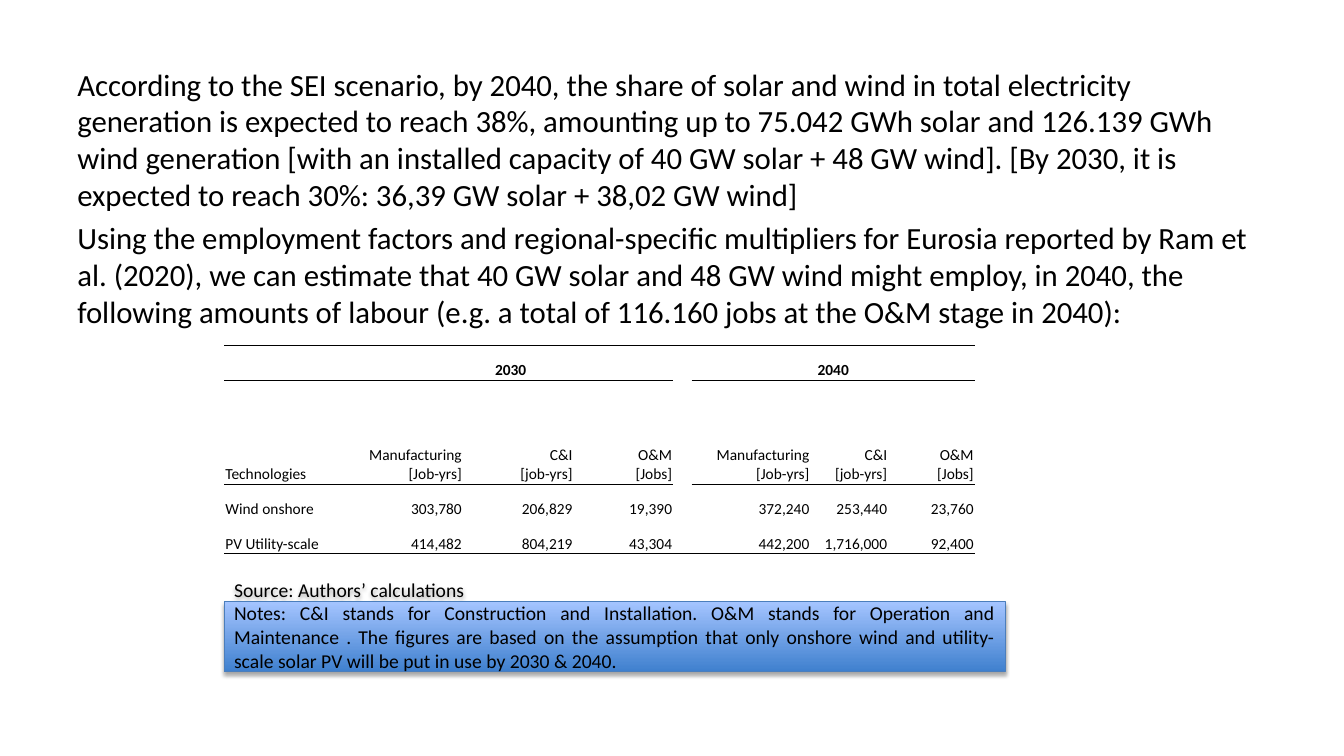
from lxml.etree import SubElement
from pptx import Presentation
from pptx.dml.color import RGBColor
from pptx.enum.shapes import MSO_SHAPE
from pptx.enum.text import MSO_ANCHOR, PP_ALIGN
from pptx.oxml import parse_xml
from pptx.oxml.ns import nsdecls, qn
from pptx.util import Cm, Pt

BLACK = RGBColor(0x00, 0x00, 0x00)
DARK_BLUE = RGBColor(0x3F, 0x80, 0xCE)
LIGHT_BLUE = RGBColor(0xA4, 0xC4, 0xFF)
EDGE_BLUE = RGBColor(0x4B, 0x7E, 0xBC)

BODY = [
    "According to the SEI scenario, by 2040, the share of solar and wind in total electricity "
    "generation is expected to reach 38%, amounting up to 75.042 GWh solar and 126.139 GWh "
    "wind generation [with an installed capacity of 40 GW solar + 48 GW wind]. [By 2030, it is "
    "expected to reach 30%: 36,39 GW solar + 38,02 GW wind]",
    "Using the employment factors and regional-specific multipliers for Eurosia reported by Ram et "
    "al. (2020), we can estimate that 40 GW solar and 48 GW wind might employ, in 2040, the "
    "following amounts of labour (e.g. a total of 116.160 jobs at the O&M stage in 2040):",
]
NOTES = [
    "Source: Authors’ calculations",
    "Notes: C&I stands for Construction and Installation. O&M stands for Operation and "
    "Maintenance . The figures are based on the assumption that only onshore wind and "
    "utility-scale solar PV will be put in use by 2030 & 2040.",
]
STAGES = ["Manufacturing\v[Job-yrs]", "C&I\v[job-yrs]", "O&M\v[Jobs]"]
JOBS = [
    ["", "2030", "", "", "", "2040", "", ""],
    ["Technologies", *STAGES, "", *STAGES],
    ["Wind onshore", "303,780", "206,829", "19,390", "", "372,240", "253,440", "23,760"],
    ["PV Utility-scale", "414,482", "804,219", "43,304", "", "442,200", "1,716,000", "92,400"],
]
COLUMN_WIDTHS = [3.12, 2.9, 2.79, 2.51, 0.46, 3, 1.96, 2.18]
ROW_HEIGHTS = [0.87, 2.62, 0.87, 0.87]
GAP_COLUMN = 4
YEAR_COLUMNS = [1, 5]
RULES = [{"T", "B"}, {"T", "B"}, {"T"}, {"B"}]
GAP_RULES = [{"T"}, set(), set(), {"B"}]


class JobsSlide:
    """Holds the text style and the current slide, and adds its elements."""

    def __init__(self, slide, font_name, color):
        self.slide = slide
        self.font_name = font_name
        self.color = color

    def set_text(self, text_frame, texts, size, alignment=PP_ALIGN.LEFT, bold=False, space_before=0):
        text_frame.word_wrap = True
        for index, text in enumerate(texts):
            paragraph = text_frame.add_paragraph() if index else text_frame.paragraphs[0]
            paragraph.text = text
            paragraph.alignment = alignment
            paragraph.space_before = Pt(space_before)
            for run in paragraph.runs:
                run.font.name = self.font_name
                run.font.size = Pt(size)
                run.font.bold = bold
                run.font.color.rgb = self.color

    def add_body(self, left, top, width, height, texts):
        box = self.slide.shapes.add_textbox(Cm(left), Cm(top), Cm(width), Cm(height))
        self.set_text(box.text_frame, texts, 22, space_before=4.4)

    def add_notes(self, left, top, width, height, texts):
        shape = self.slide.shapes.add_shape(
            MSO_SHAPE.RECTANGLE, Cm(left), Cm(top), Cm(width), Cm(height))
        shape.fill.gradient()
        shape.fill.gradient_angle = 90
        for stop, color in zip(shape.fill.gradient_stops, (DARK_BLUE, LIGHT_BLUE)):
            stop.color.rgb = color
        shape.line.color.rgb = EDGE_BLUE
        shape.line.width = Pt(0.75)
        shape.shadow.inherit = False
        effects = shape._element.spPr.find(qn("a:effectLst"))
        effects.append(parse_xml(
            f'<a:outerShdw {nsdecls("a")} blurRad="{Pt(3.1)}" dist="{Pt(1.8)}" dir="5400000" '
            'rotWithShape="0"><a:srgbClr val="000000"><a:alpha val="35000"/></a:srgbClr>'
            '</a:outerShdw>'))
        shape.text_frame.vertical_anchor = MSO_ANCHOR.MIDDLE
        shape.text_frame.margin_bottom = Cm(0.73)
        self.set_text(shape.text_frame, texts, 14, PP_ALIGN.JUSTIFY)

    def add_borders(self, cell, sides):
        properties = cell._tc.get_or_add_tcPr()
        for side in "LRTB":
            line = SubElement(properties, qn(f"a:ln{side}"), w=str(Pt(0.5)))
            if side in sides:
                fill = SubElement(line, qn("a:solidFill"))
                SubElement(fill, qn("a:srgbClr"), val=str(self.color))
            else:
                SubElement(line, qn("a:noFill"))

    def add_table(self, left, top, rows):
        table = self.slide.shapes.add_table(
            len(rows), len(COLUMN_WIDTHS), Cm(left), Cm(top),
            Cm(sum(COLUMN_WIDTHS)), Cm(sum(ROW_HEIGHTS))).table
        table.first_row = table.horz_banding = False
        for column, width in zip(table.columns, COLUMN_WIDTHS):
            column.width = Cm(width)
        for row, height in zip(table.rows, ROW_HEIGHTS):
            row.height = Cm(height)
        for row_index, texts in enumerate(rows):
            for column_index, text in enumerate(texts):
                cell = table.cell(row_index, column_index)
                rules = GAP_RULES if column_index == GAP_COLUMN else RULES
                self.add_borders(cell, rules[row_index])
                cell.fill.background()
                cell.vertical_anchor = MSO_ANCHOR.BOTTOM
                cell.margin_left = cell.margin_right = cell.margin_top = Cm(0.03)
                cell.margin_bottom = 0
                if row_index == 0:
                    alignment = PP_ALIGN.CENTER
                else:
                    alignment = PP_ALIGN.RIGHT if column_index else PP_ALIGN.LEFT
                self.set_text(cell.text_frame, [text], 11, alignment, bold=row_index == 0)
        for first in YEAR_COLUMNS:
            table.cell(0, first).merge(table.cell(0, first + 2))


def main():
    presentation = Presentation()
    presentation.slide_width = Cm(33.87)
    presentation.slide_height = Cm(19.05)
    slide = presentation.slides.add_slide(presentation.slide_layouts[6])
    jobs_slide = JobsSlide(slide, "Calibri", BLACK)
    jobs_slide.add_body(1.7, 1.52, 30.48, 16.74, BODY)
    jobs_slide.add_notes(5.65, 15.17, 19.68, 1.76, NOTES)
    jobs_slide.add_table(5.65, 8.71, JOBS)
    presentation.save("out.pptx")


if __name__ == "__main__":
    main()
